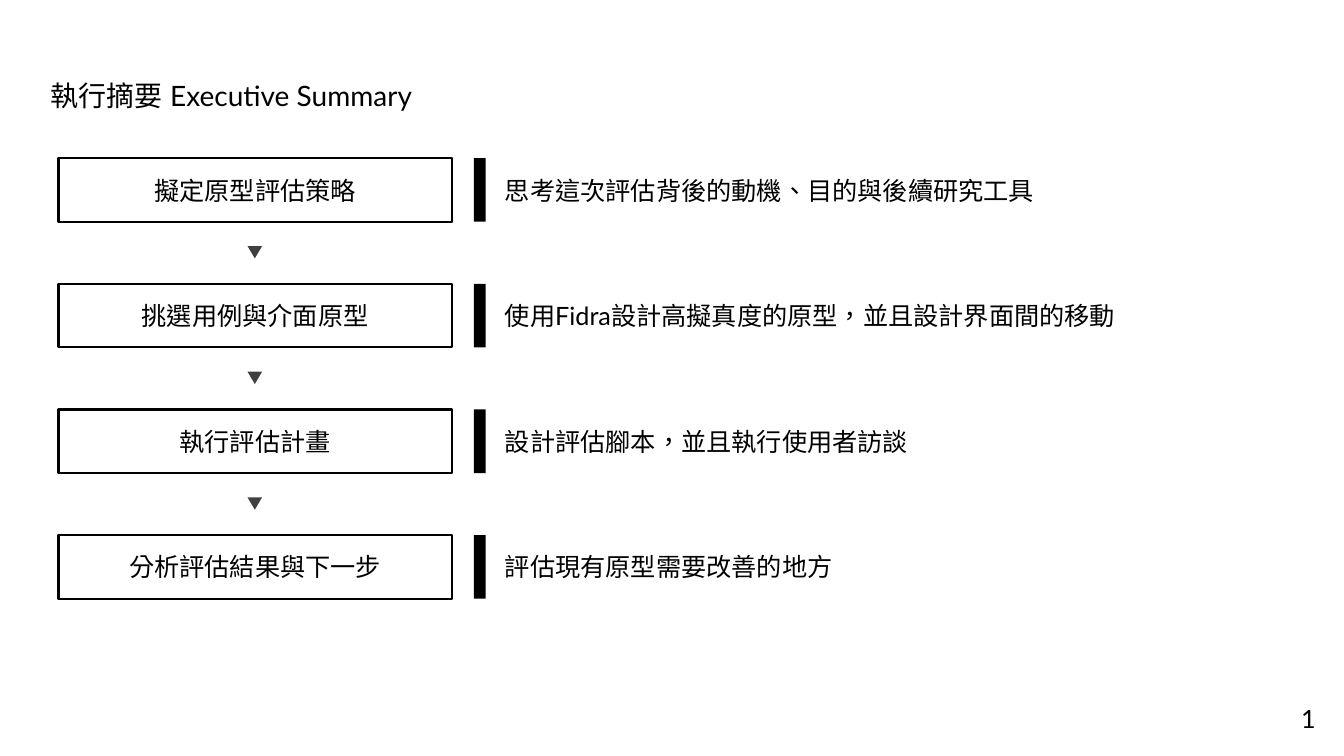
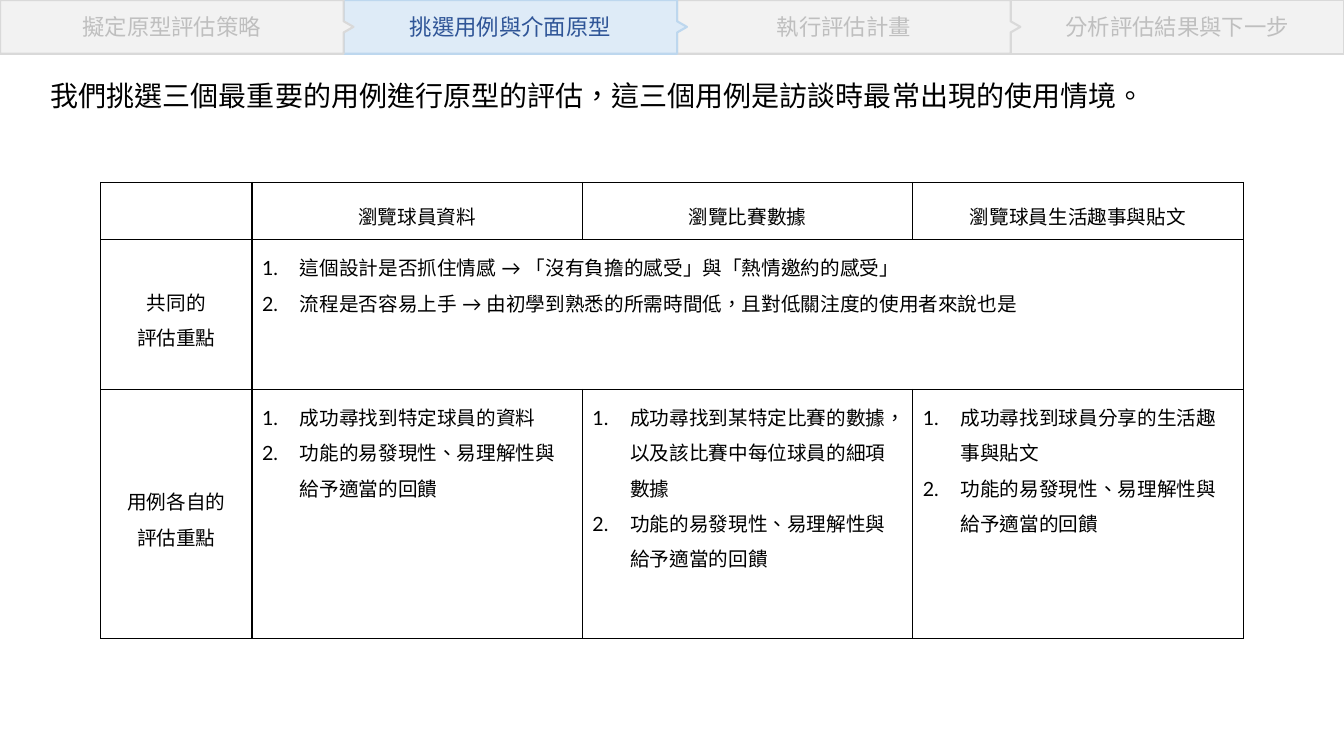
import pptx
import pptx.util
import pptx.dml.color
import pptx.enum.text
import pptx.enum.shapes
import pptx.enum.lang
import pptx.oxml.ns
import lxml.etree

Pt = pptx.util.Pt
RGB = pptx.dml.color.RGBColor
SHAPE = pptx.enum.shapes.MSO_SHAPE
ALIGN = pptx.enum.text.PP_ALIGN
ANCHOR = pptx.enum.text.MSO_ANCHOR
qn = pptx.oxml.ns.qn

FONT = "Lato"
BLACK = RGB(0x00, 0x00, 0x00)
WHITE = RGB(0xFF, 0xFF, 0xFF)
DARK = RGB(0x40, 0x40, 0x40)
PALE = RGB(0xF2, 0xF2, 0xF2)
EDGE = RGB(0xD9, 0xD9, 0xD9)
MUTED = RGB(0xBF, 0xBF, 0xBF)
SKY = RGB(0xDE, 0xEB, 0xF7)
RIM = RGB(0xBD, 0xD7, 0xEE)
NAVY = RGB(0x2F, 0x55, 0x97)

STEPS = [
    ("擬定原型評估策略", "思考這次評估背後的動機、目的與後續研究工具"),
    ("挑選用例與介面原型", "使用Fidra設計高擬真度的原型，並且設計界面間的移動"),
    ("執行評估計畫", "設計評估腳本，並且執行使用者訪談"),
    ("分析評估結果與下一步", "評估現有原型需要改善的地方"),
]
TITLES = [
    "執行摘要 Executive Summary",
    "我們挑選三個最重要的用例進行原型的評估，這三個用例是訪談時最常出現的使用情境。",
]


def write(frame, lines, size, color=BLACK, align=ALIGN.LEFT, space=None):
    """Fill a text frame with one paragraph per line."""
    looks = {"name": FONT, "size": Pt(size), "bold": False,
             "language_id": pptx.enum.lang.MSO_LANGUAGE_ID.TRADITIONAL_CHINESE}
    for i, line in enumerate(lines):
        para = frame.add_paragraph() if i else frame.paragraphs[0]
        para.alignment = align
        para.line_spacing = space
        run = para.add_run()
        run.text = line
        for key, value in looks.items():
            setattr(run.font, key, value)
        run.font.color.rgb = color
        latin = run.font._element.find(qn("a:latin")) if hasattr(run.font, "_element") \
            else run._r.rPr.find(qn("a:latin"))
        east = lxml.etree.Element(qn("a:ea"), typeface=FONT)
        latin.addnext(east)


def paint(shape, fill, line=None):
    """Set fill and outline, without a shadow."""
    shape.shadow.inherit = False
    shape.fill.solid()
    shape.fill.fore_color.rgb = fill
    if line is None:
        shape.line.fill.background()
    else:
        shape.line.color.rgb = line
        shape.line.width = Pt(1.5)


deck = pptx.Presentation()
deck.slide_width, deck.slide_height = Pt(960), Pt(540)

# Slides with their titles
slides = []
for text in TITLES:
    slide = deck.slides.add_slide(deck.slide_layouts[5])
    title = slide.shapes.title
    place = {"left": Pt(29), "top": Pt(52.5), "width": Pt(828), "height": Pt(32)}
    for key, value in place.items():
        setattr(title, key, value)
    title.text_frame.auto_size = pptx.enum.text.MSO_AUTO_SIZE.NONE
    title.text_frame.vertical_anchor = ANCHOR.TOP
    write(title.text_frame, [text], 20)
    slides.append(slide)
first, second = slides

# Step boxes, bars, notes and the arrows between
BOX_H, PITCH = 45.4, 89.75
for i, (step, note) in enumerate(STEPS):
    top = 113 + i * PITCH
    box = first.shapes.add_shape(SHAPE.RECTANGLE, Pt(41.8), Pt(top), Pt(280.8), Pt(BOX_H))
    paint(box, WHITE, BLACK)
    write(box.text_frame, [step], 18, align=ALIGN.CENTER)
    bar = first.shapes.add_shape(SHAPE.RECTANGLE, Pt(338.4), Pt(top), Pt(8.6), Pt(BOX_H))
    paint(bar, BLACK)
    side = first.shapes.add_textbox(Pt(353.5), Pt(top), Pt(530), Pt(BOX_H))
    side.text_frame.word_wrap = True
    side.text_frame.vertical_anchor = ANCHOR.MIDDLE
    write(side.text_frame, [note], 18)
    if i:
        arrow = first.shapes.add_shape(SHAPE.ISOSCELES_TRIANGLE, Pt(176.8),
                                       Pt(top - 27), Pt(10.4), Pt(8.8))
        arrow.rotation = 180
        paint(arrow, DARK)

# Page number
page = first.shapes.add_textbox(Pt(922.3), Pt(499), Pt(25.2), Pt(29))
write(page.text_frame, ["1"], 18)

# Progress band, last step at the back
BAND_H, TIP = 38.4, 7
edges = [0] + [245.5 + i * 238.17 for i in range(4)]
for i in reversed(range(4)):
    left, right = edges[i], edges[i + 1]
    if i == 3:
        tab = second.shapes.add_shape(SHAPE.RECTANGLE, Pt(left), 0, Pt(right - left), Pt(BAND_H))
    else:
        path = second.shapes.build_freeform(Pt(left), 0)
        path.add_line_segments([(Pt(x), Pt(y)) for x, y in [
            (right, 0), (right, 15.2), (right + TIP, 19.2),
            (right, 23.2), (right, BAND_H), (left, BAND_H)]])
        tab = path.convert_to_shape()
        tab.text_frame.margin_right = Pt(7.2 + TIP)
    active = i == 1
    paint(tab, SKY if active else PALE, RIM if active else EDGE)
    tab.text_frame.vertical_anchor = ANCHOR.MIDDLE
    write(tab.text_frame, [STEPS[i][0]], 16, NAVY if active else MUTED, ALIGN.CENTER)

# Table of use cases
SHARED = "功能的易發現性、易理解性與給予適當的回饋"
ROWS = [
    [[], ["瀏覽球員資料"], ["瀏覽比賽數據"], ["瀏覽球員生活趣事與貼文"]],
    [["共同的", "評估重點"],
     ["這個設計是否抓住情感 → 「沒有負擔的感受」與「熱情邀約的感受」",
      "流程是否容易上手 → 由初學到熟悉的所需時間低，且對低關注度的使用者來說也是"], [], []],
    [["用例各自的", "評估重點"],
     ["成功尋找到特定球員的資料", SHARED],
     ["成功尋找到某特定比賽的數據，以及該比賽中每位球員的細項數據", SHARED],
     ["成功尋找到球員分享的生活趣事與貼文", SHARED]],
]
grid = second.shapes.add_table(3, 4, Pt(72), Pt(130.3), Pt(816), Pt(326)).table
for flag in ("first_row", "horz_banding"):
    setattr(grid, flag, False)
for col, width in zip(grid.columns, [108, 236, 236, 236]):
    col.width = Pt(width)
for row, height in zip(grid.rows, [41, 107, 178]):
    row.height = Pt(height)
grid.cell(1, 1).merge(grid.cell(1, 3))

for r, row in enumerate(ROWS):
    for c, lines in enumerate(row):
        cell = grid.cell(r, c)
        props = cell._tc.get_or_add_tcPr()
        for name in ("a:lnL", "a:lnR", "a:lnT", "a:lnB"):
            line = lxml.etree.SubElement(props, qn(name), w=str(Pt(1)))
            fill = lxml.etree.SubElement(line, qn("a:solidFill"))
            lxml.etree.SubElement(fill, qn("a:srgbClr"), val=str(BLACK))
        cell.fill.solid()
        cell.fill.fore_color.rgb = WHITE
        if not lines:
            continue
        head = r == 0 or c == 0
        cell.vertical_anchor = ANCHOR.MIDDLE if head else ANCHOR.TOP
        write(cell.text_frame, lines, 14, align=ALIGN.CENTER if head else ALIGN.LEFT, space=1.5)
        if not head:
            for para in cell.text_frame.paragraphs:
                form = para._p.get_or_add_pPr()
                form.set("marL", str(Pt(27)))
                form.set("indent", str(-Pt(27)))
                lxml.etree.SubElement(form, qn("a:buAutoNum"), type="arabicPeriod")

deck.save("out.pptx")
